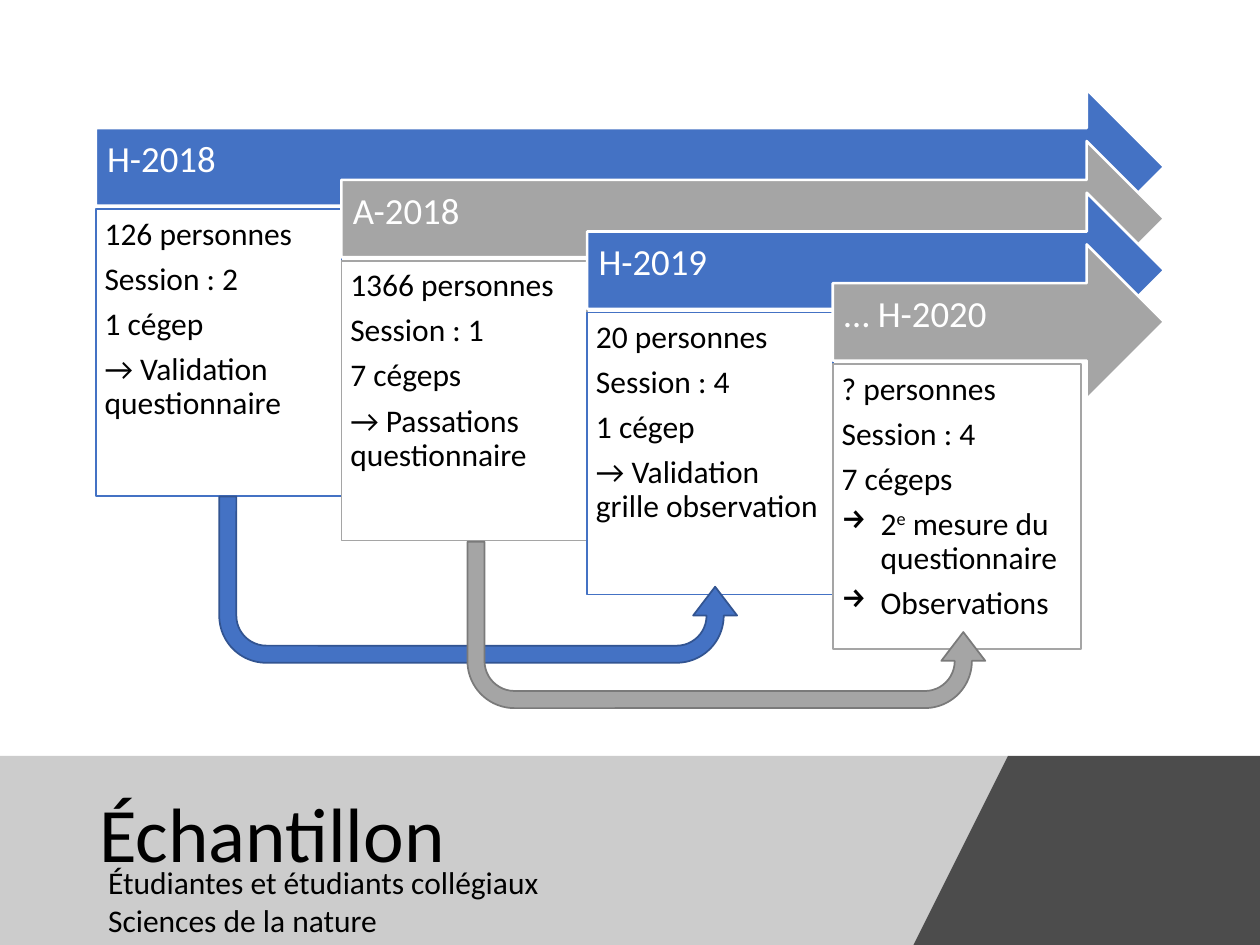
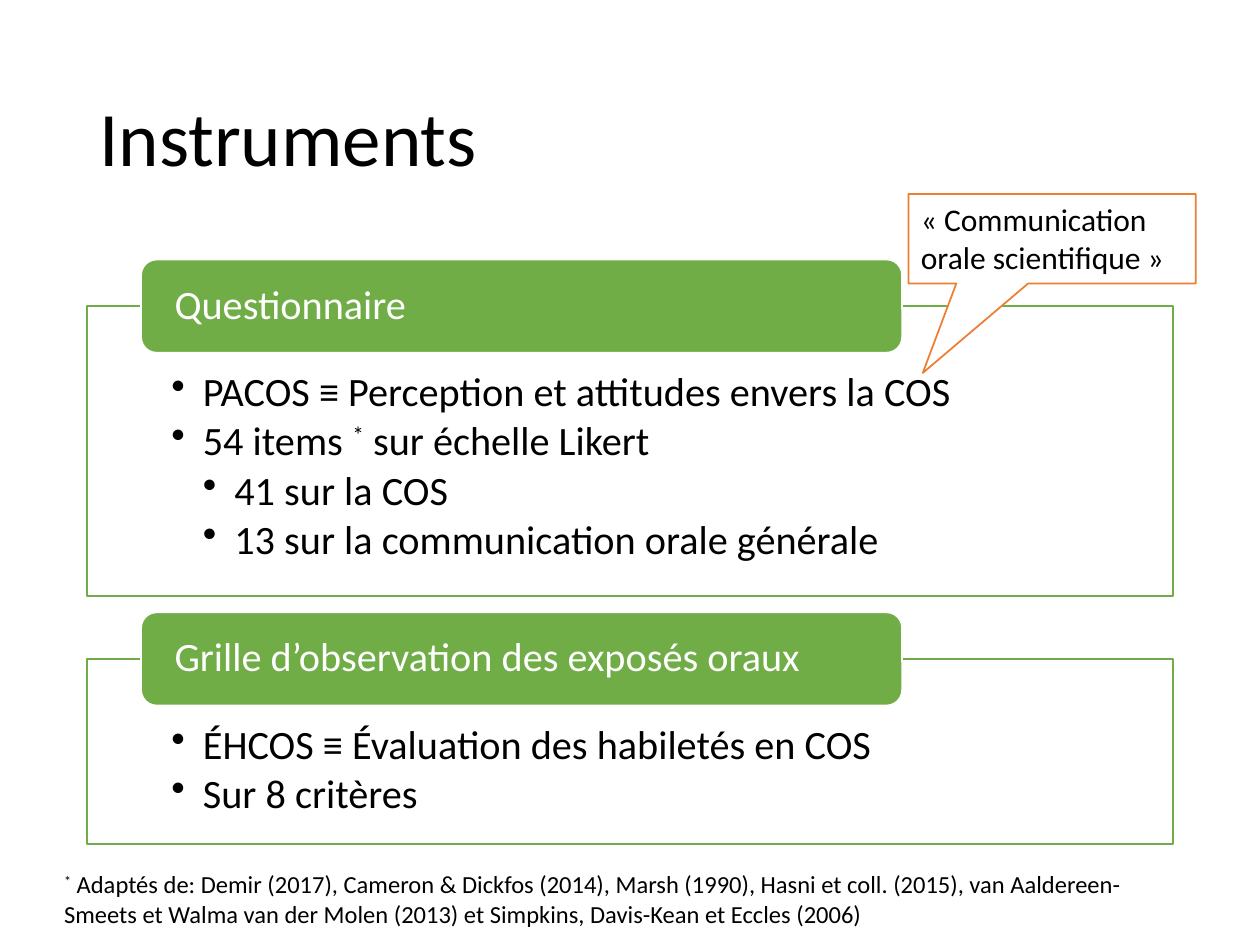
from collections import namedtuple

from lxml import etree
from pptx import Presentation
from pptx import util as u
from pptx.dml.color import RGBColor
from pptx.enum import shapes, text
from pptx.oxml.ns import qn

FONT = "Calibri"
COLORS = {
    "text": "000000",
    "white": "FFFFFF",
    "blue": "4472C4",
    "blue_edge": "325491",
    "gray": "A5A5A5",
    "gray_edge": "7A7A7A",
    "green": "70AD47",
    "orange": "ED7D31",
    "band_light": "808080",
    "band_dark": "000000",
}

Bullet = namedtuple("Bullet", "content char indent hanging")
Period = namedtuple("Period", "label height width color items")

TOP, MIDDLE = text.MSO_ANCHOR.TOP, text.MSO_ANCHOR.MIDDLE
DEFAULT_INSETS = (0.1, 0.05, 0.1, 0.05)

STEP_X, STEP_Y = 1.95, 0.41
TIMELINE_LEFT, TIMELINE_RIGHT = 0.76, 9.24


def arrow_item(content):
    return Bullet(content, "→", 0.31, 0.31)


def dot_item(content, level=1):
    return Bullet(content, "•", 0.25 * level, 0.25)


PERIODS = [
    Period("H-2018", 2.28, 1.95, "blue",
           ["126 personnes", "Session : 2", "1 cégep", "→ Validation questionnaire"]),
    Period("A-2018", 2.22, 1.95, "gray",
           ["1366 personnes", "Session : 1", "7 cégeps", "→ Passations questionnaire"]),
    Period("H-2019", 2.24, 1.95, "blue",
           ["20 personnes", "Session : 4", "1 cégep", "→ Validation grille observation"]),
    Period("… H-2020", 2.26, 1.97, "gray",
           ["? personnes", "Session : 4", "7 cégeps",
            arrow_item("2^e^ mesure du questionnaire"), arrow_item("Observations")]),
]


def rgb(name):
    return RGBColor.from_string(COLORS[name])


def inches(*lengths):
    return [u.Inches(length) for length in lengths]


def paint(shape, fill, line=None, width=1, opacity=None):
    """Set fill and outline; opacity is a percentage."""
    shape.shadow.inherit = False
    shape.fill.solid()
    shape.fill.fore_color.rgb = rgb(fill)
    if opacity is not None:
        color = shape.element.spPr.find(qn("a:solidFill"))[0]
        etree.SubElement(color, qn("a:alpha"), val=str(opacity * 1000))
    if line:
        shape.line.color.rgb = rgb(line)
        shape.line.width = u.Pt(width)
    else:
        shape.line.fill.background()


def add_bullet(paragraph, bullet):
    properties = paragraph._p.get_or_add_pPr()
    properties.set("marL", str(u.Inches(bullet.indent)))
    properties.set("indent", str(-u.Inches(bullet.hanging)))
    etree.SubElement(properties, qn("a:buChar"), char=bullet.char)


def add_runs(paragraph, content):
    """Add the content as runs; text between ^ marks is superscript."""
    for index, part in enumerate(content.split("^")):
        if part:
            run = paragraph.add_run()
            run.text = part
            if index % 2:
                run.font._element.set("baseline", "30000")


def write(shape, items, size, color="text", anchor=TOP, insets=DEFAULT_INSETS,
          line_spacing=None, gap=0):
    """Fill a shape with paragraphs; gap is the space after, as a share of the size."""
    frame = shape.text_frame
    frame.word_wrap = True
    frame.vertical_anchor = anchor
    (frame.margin_left, frame.margin_top,
     frame.margin_right, frame.margin_bottom) = inches(*insets)
    for index, item in enumerate(items):
        paragraph = frame.add_paragraph() if index else frame.paragraphs[0]
        paragraph.alignment = text.PP_ALIGN.LEFT
        paragraph.line_spacing = line_spacing
        paragraph.space_after = u.Pt(round(size * gap, 1))
        if isinstance(item, Bullet):
            add_bullet(paragraph, item)
            item = item.content
        add_runs(paragraph, item)
        paragraph.font.name = FONT
        paragraph.font.size = u.Pt(size)
        paragraph.font.color.rgb = rgb(color)


def add_preset(slide, kind, box, fill, line, width=1, opacity=None):
    shape = slide.shapes.add_shape(kind, *inches(*box))
    paint(shape, fill, line, width, opacity)
    return shape


def add_text(slide, box, items, size, **style):
    write(slide.shapes.add_textbox(*inches(*box)), items, size, **style)


def add_title(slide, box, title):
    add_text(slide, box, [title], 44, anchor=MIDDLE, line_spacing=0.9)


def add_band(slide, points, fill, opacity):
    builder = slide.shapes.build_freeform(*points[0], scale=u.Inches(1))
    builder.add_line_segments(points[1:], close=True)
    paint(builder.convert_to_shape(), fill, opacity=opacity)


def add_period(slide, index, period):
    """Draw one timeline arrow and the details box below its shaft."""
    left, drop = TIMELINE_LEFT + index * STEP_X, index * STEP_Y
    arrow = add_preset(slide, shapes.MSO_SHAPE.RIGHT_ARROW,
                       (left, 0.71 + drop, TIMELINE_RIGHT - left, 1.23),
                       period.color, "white", 1.5)
    write(arrow, [period.label], 21, "white", MIDDLE, (0.09, 0.09, 0.28, 0.19), 0.9, 0.35)
    details = add_preset(slide, shapes.MSO_SHAPE.RECTANGLE,
                         (left, 1.66 + drop, period.width, period.height),
                         "white", period.color)
    write(details, period.items, 18, insets=(0.07,) * 4, line_spacing=0.9, gap=0.35)


def add_return_arrow(slide, left, top, color):
    arrow = add_preset(slide, shapes.MSO_SHAPE.U_TURN_ARROW, (left, top, 4.11, 1.32),
                       color, color + "_edge")
    for index, value in enumerate((0.103, 0.132, 0.173, 0.283, 0.457)):
        arrow.adjustments[index] = value
    arrow.element.spPr.xfrm.set("flipV", "1")


def add_instrument(slide, top, height, heading, items):
    """Draw a framed list with a heading tab over its upper edge."""
    frame = add_preset(slide, shapes.MSO_SHAPE.RECTANGLE, (0.69, top, 8.62, height),
                       "white", "green", opacity=90)
    write(frame, items, 23, insets=(0.67, 0.52, 0.67, 0.18), line_spacing=0.9, gap=0.15)
    tab = add_preset(slide, shapes.MSO_SHAPE.ROUNDED_RECTANGLE,
                     (1.12, top - 0.37, 6.04, 0.74), "green", "white")
    write(tab, [heading], 23, "white", MIDDLE, (0.23, 0, 0.23, 0), 0.9, 0.35)


def build_sample_slide(slide):
    add_band(slide, [(0, 5.87), (7.51, 5.87), (6.95, 7.5), (0, 7.5)], "band_light", 40)
    add_title(slide, (0.69, 6.05, 6.33, 1.2), "Échantillon")
    add_band(slide, [(7.75, 5.87), (10, 5.87), (10, 7.5), (7.19, 7.5)], "band_dark", 70)
    for index, period in enumerate(PERIODS):
        add_period(slide, index, period)
    add_text(slide, (0.76, 6.8, 5, 0.71),
             ["Étudiantes et étudiants collégiaux", "Sciences de la nature"], 18)
    add_return_arrow(slide, 1.74, 3.94, "blue")
    add_return_arrow(slide, 3.71, 4.3, "gray")


def build_instruments_slide(slide):
    add_title(slide, (0.69, 0.4, 8.62, 1.45), "Instruments")
    add_instrument(slide, 2.43, 2.3, "Questionnaire", [
        dot_item("PACOS ≡ Perception et attitudes envers la COS"),
        dot_item("54 items ^*^ sur échelle Likert"),
        dot_item("41 sur la COS", 2),
        dot_item("13 sur la communication orale générale", 2),
    ])
    add_instrument(slide, 5.23, 1.47, "Grille d’observation des exposés oraux", [
        dot_item("ÉHCOS ≡ Évaluation des habiletés en COS"),
        dot_item("Sur 8 critères"),
    ])
    callout = add_preset(slide, shapes.MSO_SHAPE.RECTANGULAR_CALLOUT,
                         (7.21, 1.54, 2.28, 0.71), "white", "orange")
    callout.adjustments[0], callout.adjustments[1] = -0.45, 1.5
    write(callout, ["« Communication orale scientifique »"], 18)
    add_text(slide, (0.41, 6.85, 9.08, 0.57), [
        "^*^ Adaptés de: Demir (2017), Cameron & Dickfos (2014), Marsh (1990), "
        "Hasni et coll. (2015), van Aaldereen-Smeets et Walma van der Molen (2013) "
        "et Simpkins, Davis-Kean et Eccles (2006)"], 14)


def main():
    presentation = Presentation()
    presentation.slide_width, presentation.slide_height = inches(10, 7.5)
    blank = presentation.slide_layouts[6]
    for build in (build_sample_slide, build_instruments_slide):
        build(presentation.slides.add_slide(blank))
    presentation.save("out.pptx")


if __name__ == "__main__":
    main()
